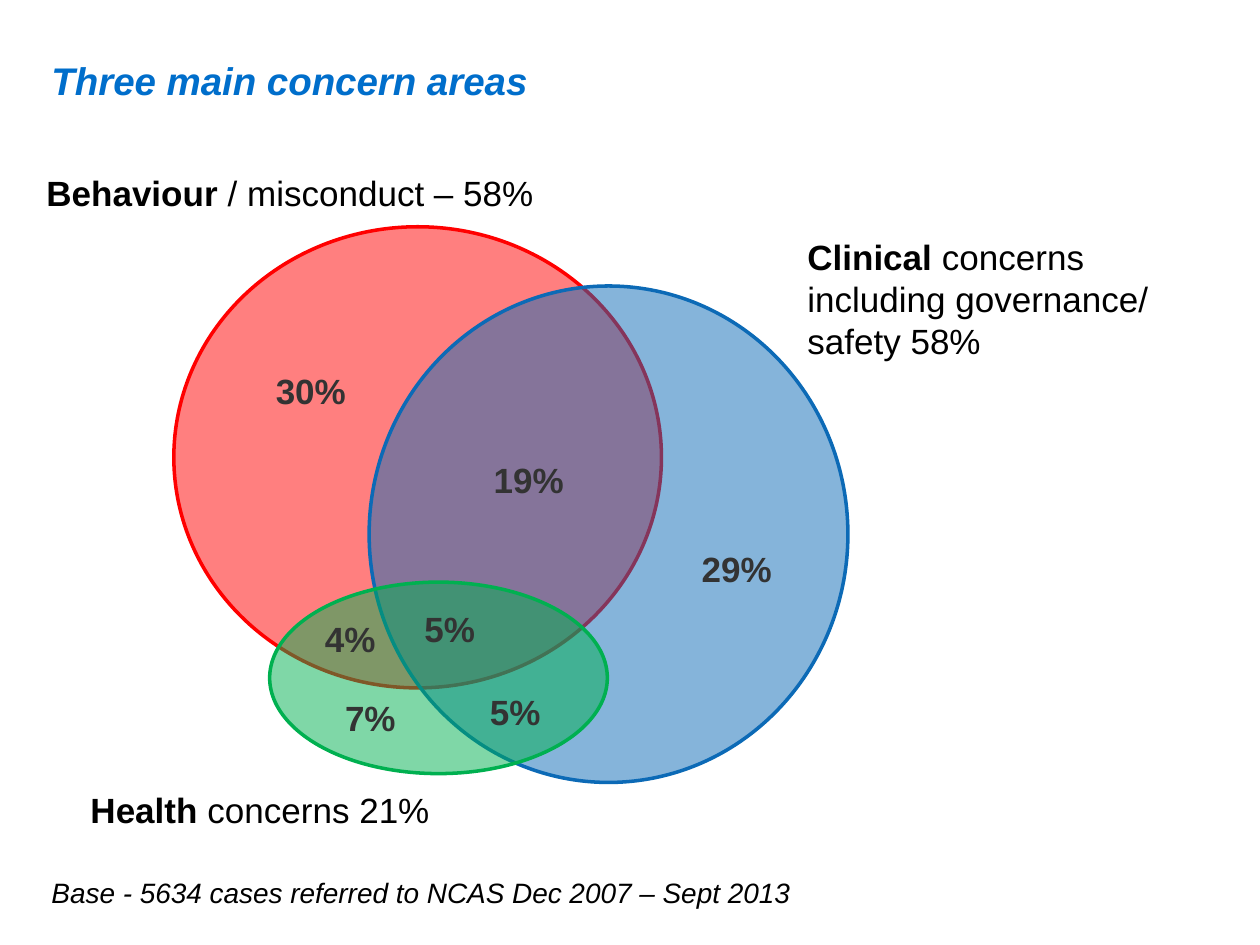
from pptx import Presentation
from pptx.dml.color import RGBColor
from pptx.enum.shapes import MSO_SHAPE as Shape
from pptx.enum.text import MSO_ANCHOR as Anchor
from pptx.oxml.xmlchemy import OxmlElement
from pptx.util import Inches, Pt

COLOURS = {
    "title": "006ECB",
    "text": "000000",
    "share": "333333",
    "behaviour": "FF0000",
    "clinical": "0C6AB6",
    "health": "00B050",
}

# Text formats
TITLE = {"size": Pt(22), "bold": True, "italic": True}
STRONG = {"size": Pt(20), "bold": True}
PLAIN = {"size": Pt(20), "bold": False}
NOTE = {"size": Pt(16), "italic": True}

# Content: places are left, top, width, height in inches
HEADING = ("Three main concern areas", (0.31, 0.24, 9.45, 0.79))
BASE_NOTE = ("Base - 5634 cases referred to NCAS Dec 2007 – Sept 2013",
             (0.31, 6.9, 6.21, 0.37))
AREA_LABELS = [
    ("Behaviour ", "/ misconduct – 58%", (0.27, 1.31, 4.36, 0.44)),
    ("Clinical ", "concerns including governance/ safety 58%",
     (6.31, 1.82, 3.5, 1.11)),
    ("Health ", "concerns 21%", (0.62, 6.21, 2.93, 0.44)),
]
CIRCLES = [
    ("behaviour", (1.38, 1.8, 3.87, 3.66)),
    ("clinical", (2.93, 2.27, 3.8, 3.94)),
    ("health", (2.14, 4.62, 2.68, 1.52)),
]
SHARES = [  # text, left, top
    ("30%", 2.09, 2.88),
    ("19%", 3.82, 3.59),
    ("29%", 5.47, 4.3),
    ("5%", 3.27, 4.77),
    ("5%", 3.79, 5.43),
    ("4%", 2.48, 4.85),
    ("7%", 2.64, 5.48),
]
SHARE_WIDTHS = {2: 0.66, 3: 0.82}  # by number of characters
SHARE_HEIGHT = 0.43


def colour(name):
    return RGBColor.from_string(COLOURS[name])


def add_text(page, place, spans, colour_name="text", anchor=Anchor.TOP):
    box = page.shapes.add_textbox(*map(Inches, place))
    frame = box.text_frame
    frame.word_wrap = True
    frame.vertical_anchor = anchor
    para = frame.paragraphs[0]
    for text, formats in spans:
        span = para.add_run()
        span.text = text
        span.font.color.rgb = colour(colour_name)
        for key, value in {"name": "Arial", **formats}.items():
            setattr(span.font, key, value)


def add_circle(page, name, place):
    circle = page.shapes.add_shape(Shape.OVAL, *map(Inches, place))
    circle.shadow.inherit = False
    circle.fill.solid()
    circle.fill.fore_color.rgb = colour(name)
    circle.line.color.rgb = colour(name)
    circle.line.width = Pt(2)
    # Half-transparent fill
    alpha = OxmlElement("a:alpha")
    alpha.set("val", "50000")
    circle.fill._xPr.find(".//{*}solidFill/{*}srgbClr").append(alpha)


def main():
    deck = Presentation()
    deck.slide_width, deck.slide_height = Inches(10), Inches(7.5)
    page = deck.slides.add_slide(deck.slide_layouts[6])

    # Heading and area labels
    text, place = HEADING
    add_text(page, place, [(text, TITLE)], "title", Anchor.MIDDLE)
    for area, detail, place in AREA_LABELS:
        add_text(page, place, [(area, STRONG), (detail, PLAIN)])

    # Overlapping circles with the share of each region
    for name, place in CIRCLES:
        add_circle(page, name, place)
    for text, left, top in SHARES:
        place = (left, top, SHARE_WIDTHS[len(text)], SHARE_HEIGHT)
        add_text(page, place, [(text, STRONG)], "share")

    # Base of the figures
    text, place = BASE_NOTE
    add_text(page, place, [(text, NOTE)])

    deck.save("out.pptx")


if __name__ == "__main__":
    main()
